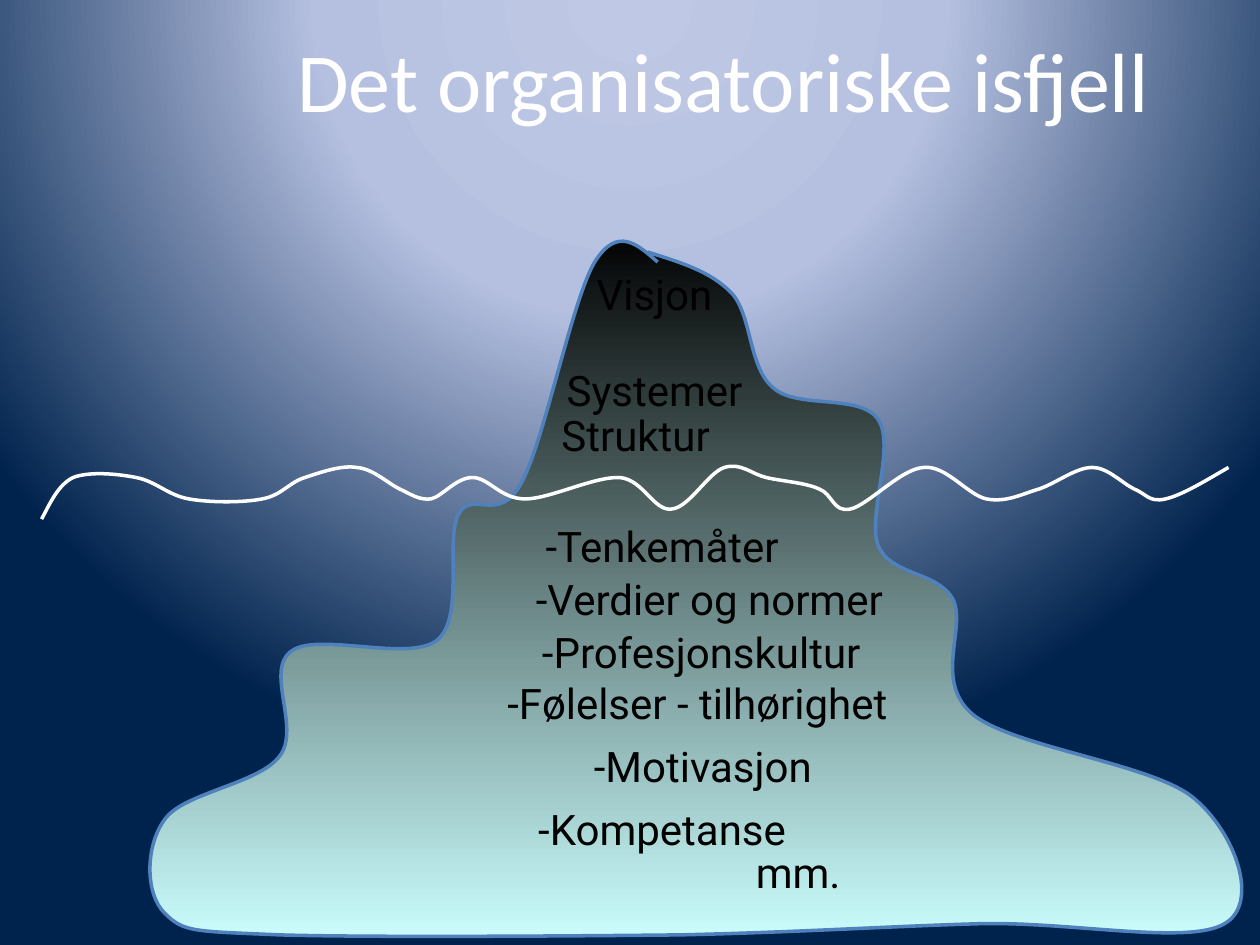
from dataclasses import dataclass

from pptx import Presentation
from pptx.dml.color import RGBColor as RGB
from pptx.enum.text import MSO_ANCHOR as ANCHOR, MSO_AUTO_SIZE as AUTO, PP_ALIGN as ALIGN
from pptx.oxml import parse_xml
from pptx.oxml.ns import nsdecls, qn
from pptx.util import Pt

PX = 9144
WIDTH, HEIGHT = 1000, 750


@dataclass(frozen=True)
class Theme:
    title_font: str = "Calibri"
    label_font: str = "Roboto"
    title_size: int = 48
    label_size: int = 24
    line_width: int = 2
    white: str = "FFFFFF"
    black: str = "000000"
    ice: str = "CCFFFF"
    outline: str = "4F81BD"
    sky: tuple = ((0, "BFC9E5"), (40, "B5C0E0"), (100, "00234D"))


T = Theme()

TITLE = ("Det organisatoriske isfjell", 148, 0, 852, 125)
LABELS = [
    ("Visjon", 453, 208, 133),
    ("Systemer", 409, 284, 221),
    ("Struktur", 421, 320, 167),
    ("-Tenkemåter", 392, 408, 267),
    ("-Verdier og normer", 392, 450, 342),
    ("-Følelser - tilhørighet", 366, 533, 375),
    ("-Profesjonskultur", 392, 492, 329),
    ("-Motivasjon ", 366, 583, 392),
]
GROUPED_LABELS = [
    ("-Kompetanse", 392, 633, 267),
    ("mm.", 500, 667, 267),
]
LABEL_HEIGHT = 50

ICEBERG = [
    (514, 200),
    (539, 208), (564, 215), (581, 233), (597, 251), (594, 292), (614, 308),
    (633, 325), (683, 312), (697, 333), (711, 354), (688, 410), (697, 433),
    (707, 457), (743, 453), (756, 475), (768, 497), (740, 540), (772, 567),
    (804, 593), (914, 606), (947, 633), (981, 661), (1000, 717), (972, 733),
    (944, 750), (853, 732), (781, 733), (708, 735), (632, 740), (539, 742),
    (446, 743), (290, 744), (222, 742), (154, 739), (146, 740), (131, 725),
    (115, 710), (115, 671), (131, 650), (146, 629), (206, 622), (222, 600),
    (239, 578), (210, 532), (231, 517), (251, 501), (325, 526), (347, 508),
    (369, 490), (353, 429), (364, 408), (375, 388), (396, 417), (414, 383),
    (432, 350), (454, 238), (472, 208), (490, 179), (506, 194), (522, 208),
]
WATERLINE = [
    (33, 412),
    (40, 399), (46, 385), (58, 379), (71, 374), (93, 376), (108, 379),
    (124, 382), (133, 393), (150, 396), (167, 399), (193, 399), (208, 396),
    (224, 393), (229, 383), (242, 379), (254, 375), (271, 369), (283, 371),
    (296, 372), (307, 383), (317, 388), (326, 392), (332, 397), (342, 396),
    (351, 394), (362, 379), (375, 379), (388, 379), (397, 396), (417, 396),
    (436, 396), (472, 378), (492, 379), (511, 381), (519, 406), (533, 404),
    (547, 403), (562, 375), (575, 371), (588, 367), (596, 376), (608, 379),
    (621, 382), (639, 383), (650, 388), (661, 392), (661, 407), (675, 404),
    (689, 401), (715, 372), (733, 371), (751, 369), (768, 393), (783, 396),
    (799, 399), (811, 392), (825, 388), (839, 383), (854, 371), (867, 371),
    (879, 371), (890, 383), (900, 388), (910, 392), (912, 399), (925, 396),
    (938, 393), (956, 382), (975, 371),
]


def paint_background(slide):
    stops = "".join(
        f'<a:gs pos="{pos * 1000}"><a:srgbClr val="{color}"/></a:gs>' for pos, color in T.sky
    )
    bg = parse_xml(
        f'<p:bg {nsdecls("p", "a")}><p:bgPr><a:gradFill rotWithShape="1"><a:gsLst>{stops}</a:gsLst>'
        '<a:path path="circle"><a:fillToRect l="50000" t="-80000" r="50000" b="180000"/></a:path>'
        "</a:gradFill><a:effectLst/></p:bgPr></p:bg>"
    )
    slide._element.cSld.insert(0, bg)


def add_text(shapes, text, x, y, w, h, font, size, color):
    sp = shapes.add_textbox(x * PX, y * PX, w * PX, h * PX)
    tf = sp.text_frame
    tf.word_wrap = True
    tf.text = text
    p = tf.paragraphs[0]
    p.alignment = ALIGN.CENTER
    r = p.runs[0]
    r.font.name, r.font.size = font, Pt(size)
    r.font.color.rgb = RGB.from_string(color)
    return tf


def add_labels(shapes, labels):
    for text, x, y, w in labels:
        tf = add_text(shapes, text, x, y, w, LABEL_HEIGHT, T.label_font, T.label_size, T.black)
        tf.auto_size = AUTO.SHAPE_TO_FIT_TEXT


def add_curve(shapes, points, color):
    builder = shapes.build_freeform(*points[0], scale=PX)
    builder.add_line_segments(points[1:], close=False)
    sp = builder.convert_to_shape()
    outline = sp._element.xpath(".//a:path")[0]
    segments = outline.findall(qn("a:lnTo"))
    for i in range(0, len(segments), 3):
        bezier = outline.makeelement(qn("a:cubicBezTo"), {})
        outline.append(bezier)
        for segment in segments[i:i + 3]:
            bezier.append(segment[0])
            outline.remove(segment)
    sp.shadow.inherit = False
    sp.line.color.rgb = RGB.from_string(color)
    sp.line.width = Pt(T.line_width)
    return sp


def main():
    prs = Presentation()
    prs.slide_width, prs.slide_height = WIDTH * PX, HEIGHT * PX
    s = prs.slides.add_slide(prs.slide_layouts[6])
    paint_background(s)

    title = add_text(s.shapes, *TITLE, T.title_font, T.title_size, T.white)
    title.vertical_anchor = ANCHOR.MIDDLE

    iceberg = add_curve(s.shapes, ICEBERG, T.outline)
    iceberg.fill.gradient()
    iceberg.fill.gradient_angle = 270
    for stop, color in zip(iceberg.fill.gradient_stops, (T.black, T.ice)):
        stop.color.rgb = RGB.from_string(color)

    add_curve(s.shapes, WATERLINE, T.white).fill.background()
    add_labels(s.shapes, LABELS)
    add_labels(s.shapes.add_group_shape().shapes, GROUPED_LABELS)
    prs.save("out.pptx")


if __name__ == "__main__":
    main()
